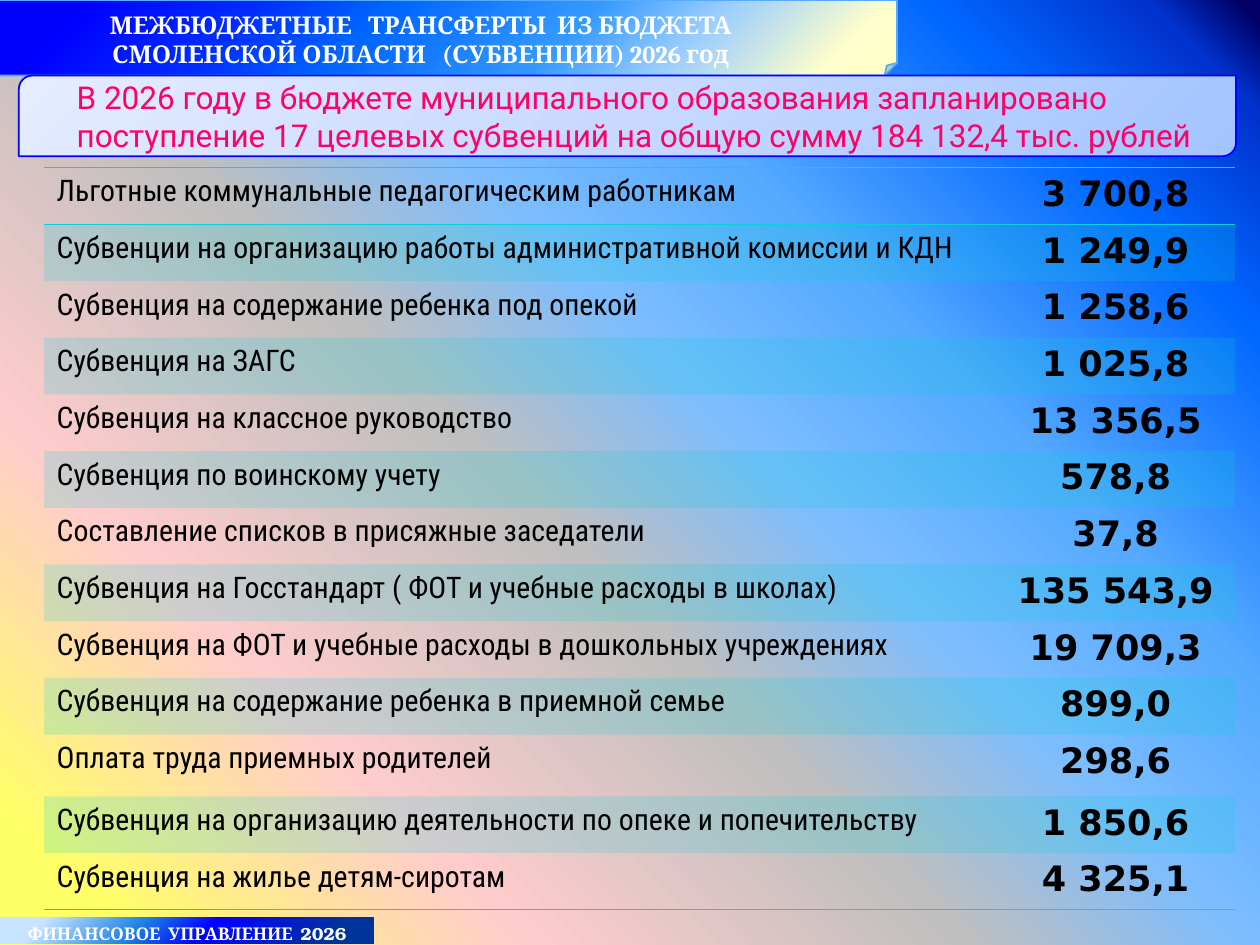
from lxml.etree import SubElement
from pptx import Presentation
from pptx.dml.color import RGBColor
from pptx.enum.shapes import MSO_SHAPE as Shape
from pptx.enum.text import MSO_ANCHOR as Anchor, MSO_AUTO_SIZE as AutoSize, PP_ALIGN as Align
from pptx.oxml.ns import qn
from pptx.util import Inches, Pt

ROWS = [
    ("Льготные коммунальные педагогическим работникам", "3 700,8"),
    ("Субвенции на организацию работы административной комиссии и КДН", "1 249,9"),
    ("Субвенция на содержание ребенка под опекой", "1 258,6"),
    ("Субвенция на ЗАГС", "1 025,8"),
    ("Субвенция на классное руководство", "13 356,5"),
    ("Субвенция по воинскому учету", "578,8"),
    ("Составление списков в присяжные заседатели", "37,8"),
    ("Субвенция на Госстандарт ( ФОТ и учебные расходы в школах)", "135 543,9"),
    ("Субвенция на ФОТ и учебные расходы в дошкольных учреждениях", "19 709,3"),
    ("Субвенция на содержание ребенка в приемной семье", "899,0"),
    ("Оплата труда приемных родителей", "298,6"),
    ("Субвенция на организацию деятельности по опеке и попечительству", "1 850,6"),
    ("Субвенция на жилье детям-сиротам", "4 325,1"),
]
TALL_ROW = 10
BACKDROP = [(6, "FFFF66"), (24, "FFCCCC"), (44, "BFBFBF"), (57, "7BBDFF", 28),
            (69, "56AAFF"), (85, "0066FF"), (95, "0031CC"), (99, "000066")]
BANNER = [(9, "0000FF"), (26, "002AFF"), (41, "0066FF"), (62, "3399FF"),
          (75, "99CCFF"), (92, "FFFFCC"), (99, "FFFFCC"), (100, "FFFF00")]
PANEL = [(0, "A3C4FF"), (50, "C7D9FF"), (100, "E4ECFF")]
FOOTER = [(12, "003399"), (45, "0000FF"), (63, "1E81E4"), (88, "C7E3FF")]
NO_GRID_STYLE = "{2D5ABB26-0587-4C30-8999-92F81FD0307C}"


def color(value):
    return RGBColor.from_string(value)


class SlideBuilder:
    serif = "Cambria"
    sans = "Roboto"
    label = "Roboto Condensed"
    number = "DejaVu Sans"
    footer_number = "TeX Gyre Bonum"
    accent = "0BD0D9"
    white = "FFFFFF"
    black = "000000"
    pink = "FF0066"

    def __init__(self, page):
        self.page = page

    def add_color(self, parent, value, alpha=None):
        node = SubElement(parent, qn("a:srgbClr"), val=value)
        if alpha is not None:
            SubElement(node, qn("a:alpha"), val=str(alpha * 1000))

    def gradient(self, fill, owner, stops, angle=None):
        fill.gradient()
        grad = next(owner.iter(qn("a:gradFill")))
        for child in list(grad):
            grad.remove(child)
        stop_list = SubElement(grad, qn("a:gsLst"))
        for position, *shade in stops:
            stop = SubElement(stop_list, qn("a:gs"), pos=str(position * 1000))
            self.add_color(stop, *shade)
        if angle is None:
            circle = SubElement(grad, qn("a:path"), path="circle")
            SubElement(circle, qn("a:fillToRect"), t="100000", r="100000")
        else:
            SubElement(grad, qn("a:lin"), ang=str(angle * 60000), scaled="0")

    def background(self, stops):
        self.gradient(self.page.background.fill, self.page._element, stops)

    def font(self, target, name, size, shade, bold=False):
        target.font.name = name
        target.font.size = Pt(size)
        target.font.bold = bold
        target.font.color.rgb = color(shade)

    def shape(self, kind, area, stops, angle, line=None):
        box = self.page.shapes.add_shape(kind, *map(Inches, area))
        box.shadow.inherit = False
        self.gradient(box.fill, box._element, stops, angle)
        if line:
            box.line.color.rgb = color(line)
            box.line.width = Pt(1)
        else:
            box.line.fill.background()
        return box

    def title(self, text, area):
        box = self.page.shapes.title
        self.page.shapes._spTree.append(box._element)
        box.left, box.top, box.width, box.height = map(Inches, area)
        frame = box.text_frame
        frame.auto_size = AutoSize.NONE
        frame.vertical_anchor = Anchor.TOP
        para = frame.paragraphs[0]
        para.text = text
        para.alignment = Align.CENTER
        self.font(para, self.serif, 14, self.white, True)

    def text(self, text, area):
        frame = self.page.shapes.add_textbox(*map(Inches, area)).text_frame
        frame.word_wrap = True
        frame.auto_size = AutoSize.SHAPE_TO_FIT_TEXT
        para = frame.paragraphs[0]
        para.text = text
        self.font(para, self.sans, 18, self.pink)

    def footer(self, text, year, area):
        frame = self.shape(Shape.RECTANGLE, area, FOOTER, 225).text_frame
        frame.margin_top = frame.margin_bottom = 0
        frame.vertical_anchor = Anchor.BOTTOM
        para = frame.paragraphs[0]
        para.alignment = Align.CENTER
        for words, name in ((text, self.serif), (year, self.footer_number)):
            span = para.add_run()
            span.text = words
            self.font(span, name, 10, self.white, True)

    def border(self, cell, side):
        line = SubElement(cell._tc.get_or_add_tcPr(), qn(side), w=str(Pt(1)))
        self.add_color(SubElement(line, qn("a:solidFill")), self.accent)

    def cell(self, cell, text, is_number, sides, banded):
        for side in sides:
            self.border(cell, side)
        if banded:
            cell.fill.solid()
            cell.fill.fore_color.rgb = color(self.accent)
            shade = next(cell._tc.tcPr.find(qn("a:solidFill")).iter(qn("a:srgbClr")))
            SubElement(shade, qn("a:alpha"), val="20000")
        else:
            cell.fill.background()
        para = cell.text_frame.paragraphs[0]
        para.text = text
        if is_number:
            para.alignment = Align.CENTER
            self.font(para, self.number, 20, self.black, True)
        else:
            self.font(para, self.label, 17, self.black)

    def table(self, rows, area, widths):
        frame = self.page.shapes.add_table(len(rows), len(widths), *map(Inches, area))
        table = frame.table
        table.first_row = table.horz_banding = False
        table._tbl.tblPr.find(qn("a:tableStyleId")).text = NO_GRID_STYLE
        for column, width in zip(table.columns, widths):
            column.width = Inches(width)
        for index, values in enumerate(rows):
            table.rows[index].height = Inches(0.49 if index == TALL_ROW else 0.45)
            sides = ["a:lnT"] if index == 0 else []
            if index in (0, len(rows) - 1):
                sides.append("a:lnB")
            for column, value in enumerate(values):
                self.cell(table.cell(index, column), value, column == 1, sides, index % 2 == 1)


def main():
    deck = Presentation()
    deck.slide_width, deck.slide_height = Inches(10), Inches(7.5)
    builder = SlideBuilder(deck.slides.add_slide(deck.slide_layouts[5]))
    builder.background(BACKDROP)
    builder.shape(Shape.FOLDED_CORNER, (-0.01, 0, 7.13, 0.6), BANNER, 45, "56AAFF")
    builder.title("МЕЖБЮДЖЕТНЫЕ   ТРАНСФЕРТЫ  ИЗ БЮДЖЕТА СМОЛЕНСКОЙ ОБЛАСТИ   (СУБВЕНЦИИ) 2026 год",
                  (0.15, 0.03, 6.38, 0.57))
    builder.shape(Shape.ROUND_2_DIAG_RECTANGLE, (0.15, 0.6, 9.66, 0.64), PANEL, 225, "0000FF")
    builder.text("В 2026 году в бюджете муниципального образования запланировано  "
                 "поступление 17 целевых субвенций на общую сумму 184 132,4 тыс. рублей",
                 (0.51, 0.57, 9.72, 0.71))
    builder.table(ROWS, (0.35, 1.33, 9.45, 5.87), (7.56, 1.89))
    builder.footer("ФИНАНСОВОЕ  УПРАВЛЕНИЕ  ", "2026", (0, 7.28, 2.97, 0.21))
    deck.save("out.pptx")


if __name__ == "__main__":
    main()
